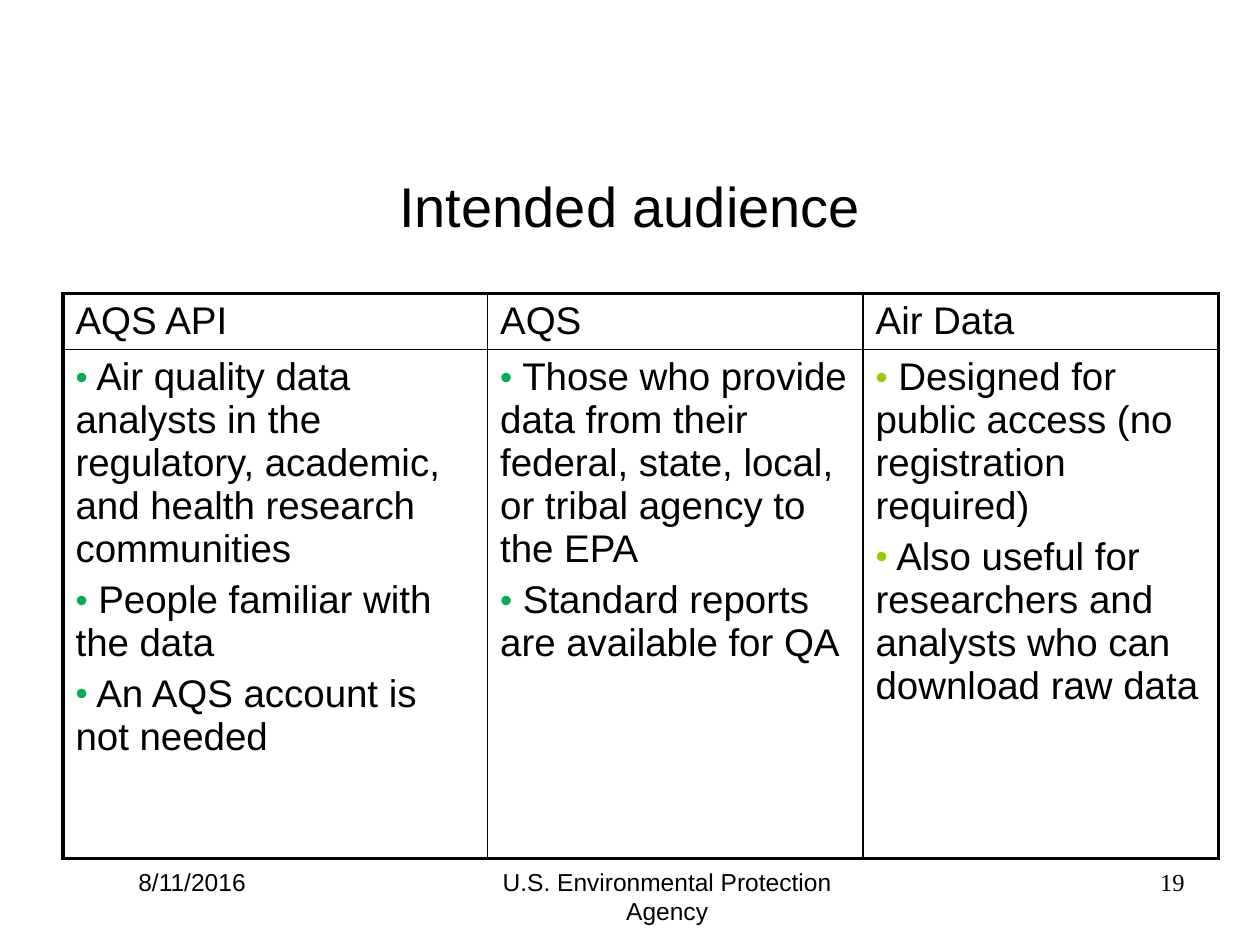
"""Build the intended audience slide with its three-column comparison table."""
import pptx
import pptx.dml.color
import pptx.enum.text
import pptx.oxml
import pptx.oxml.ns
import pptx.util

Inches, Pt = pptx.util.Inches, pptx.util.Pt
ALIGN = pptx.enum.text.PP_ALIGN
ANCHOR = pptx.enum.text.MSO_ANCHOR

COLORS = {"ink": "000000", "green": "00B050", "lime": "99CC00"}
TITLE = "Intended audience"
AUDIENCES = [
    ("AQS API", 3.37, "green", [
        "Air quality data analysts in the regulatory, academic, and health research communities",
        "People familiar with the data",
        "An AQS account is not needed",
    ]),
    ("AQS", 2.98, "green", [
        "Those who provide data from their federal, state, local, or tribal agency to the EPA",
        "Standard reports are available for QA",
    ]),
    ("Air Data", 2.82, "lime", [
        "Designed for public access (no registration required)",
        "Also useful for researchers and analysts who can download raw data",
    ]),
]
ROW_HEIGHTS = [0.44, 4.04]
TABLE_LEFT, TABLE_TOP = 0.5, 2.33
OUTER_LINE, INNER_LINE = 2.25, 1
FOOTERS = [
    ("8/11/2016", 1, 2.17, ALIGN.LEFT, "Arial"),
    ("U.S. Environmental Protection Agency", 3.67, 3.25, ALIGN.CENTER, "Arial"),
    ("19", 7.42, 2.08, ALIGN.RIGHT, "Times New Roman"),
]
FOOTER_TOP, FOOTER_HEIGHT = 6.83, 0.5


def style(paragraph, size, face="Arial"):
    for run in paragraph.runs:
        run.font.size = Pt(size)
        run.font.name = face
        run.font.color.rgb = pptx.dml.color.RGBColor.from_string(COLORS["ink"])


def add_bullet(paragraph, color):
    properties = paragraph._p.get_or_add_pPr()
    properties.set("marL", "0")
    properties.set("indent", "0")
    namespace = pptx.oxml.ns.nsdecls("a")
    for element in (
        f'<a:buClr {namespace}><a:srgbClr val="{COLORS[color]}"/></a:buClr>',
        f'<a:buSzPct {namespace} val="90000"/>',
        f'<a:buFont {namespace} typeface="Arial"/>',
        f'<a:buChar {namespace} char="•"/>',
    ):
        properties.append(pptx.oxml.parse_xml(element))


def set_borders(cell, widths):
    properties = cell._tc.get_or_add_tcPr()
    namespace = pptx.oxml.ns.nsdecls("a")
    for position, (side, width) in enumerate(widths.items()):
        properties.insert(position, pptx.oxml.parse_xml(
            f'<a:ln{side} {namespace} w="{Pt(width)}"><a:solidFill>'
            f'<a:srgbClr val="{COLORS["ink"]}"/></a:solidFill></a:ln{side}>'))


def add_title(slide):
    title = slide.shapes.title
    title.left, title.top = Inches(0.75), Inches(1)
    title.width, title.height = Inches(8.5), Inches(1.25)
    title.text_frame.text = TITLE
    title.text_frame.vertical_anchor = ANCHOR.MIDDLE
    heading = title.text_frame.paragraphs[0]
    heading.alignment = ALIGN.CENTER
    style(heading, 32)


def add_audience_table(slide):
    last_row, last_column = len(ROW_HEIGHTS) - 1, len(AUDIENCES) - 1
    table = slide.shapes.add_table(
        len(ROW_HEIGHTS), len(AUDIENCES), Inches(TABLE_LEFT), Inches(TABLE_TOP),
        Inches(sum(audience[1] for audience in AUDIENCES)),
        Inches(sum(ROW_HEIGHTS))).table
    table.first_row = table.horz_banding = False
    for row, height in zip(table.rows, ROW_HEIGHTS):
        row.height = Inches(height)
    for column, (name, width, color, points) in enumerate(AUDIENCES):
        table.columns[column].width = Inches(width)
        table.cell(0, column).text_frame.text = name
        body = table.cell(1, column).text_frame
        body.text = "\n".join(f" {point}" for point in points)
        for number, paragraph in enumerate(body.paragraphs):
            add_bullet(paragraph, color)
            paragraph.space_before = Pt(4.4 if number else 0)
        for row in range(len(ROW_HEIGHTS)):
            cell = table.cell(row, column)
            cell.fill.background()
            edges = {"L": column == 0, "R": column == last_column,
                     "T": row == 0, "B": row == last_row}
            set_borders(cell, {side: OUTER_LINE if outer else INNER_LINE
                               for side, outer in edges.items()})
            for paragraph in cell.text_frame.paragraphs:
                style(paragraph, 22)


def add_footers(slide):
    for text, left, width, alignment, face in FOOTERS:
        frame = slide.shapes.add_textbox(
            Inches(left), Inches(FOOTER_TOP), Inches(width),
            Inches(FOOTER_HEIGHT)).text_frame
        frame.word_wrap = True
        frame.text = text
        frame.paragraphs[0].alignment = alignment
        style(frame.paragraphs[0], 14, face)


def main():
    deck = pptx.Presentation()
    deck.slide_width, deck.slide_height = Inches(10), Inches(7.5)
    slide = deck.slides.add_slide(deck.slide_layouts.get_by_name("Title Only"))
    add_title(slide)
    add_audience_table(slide)
    add_footers(slide)
    deck.save("out.pptx")


if __name__ == "__main__":
    main()
